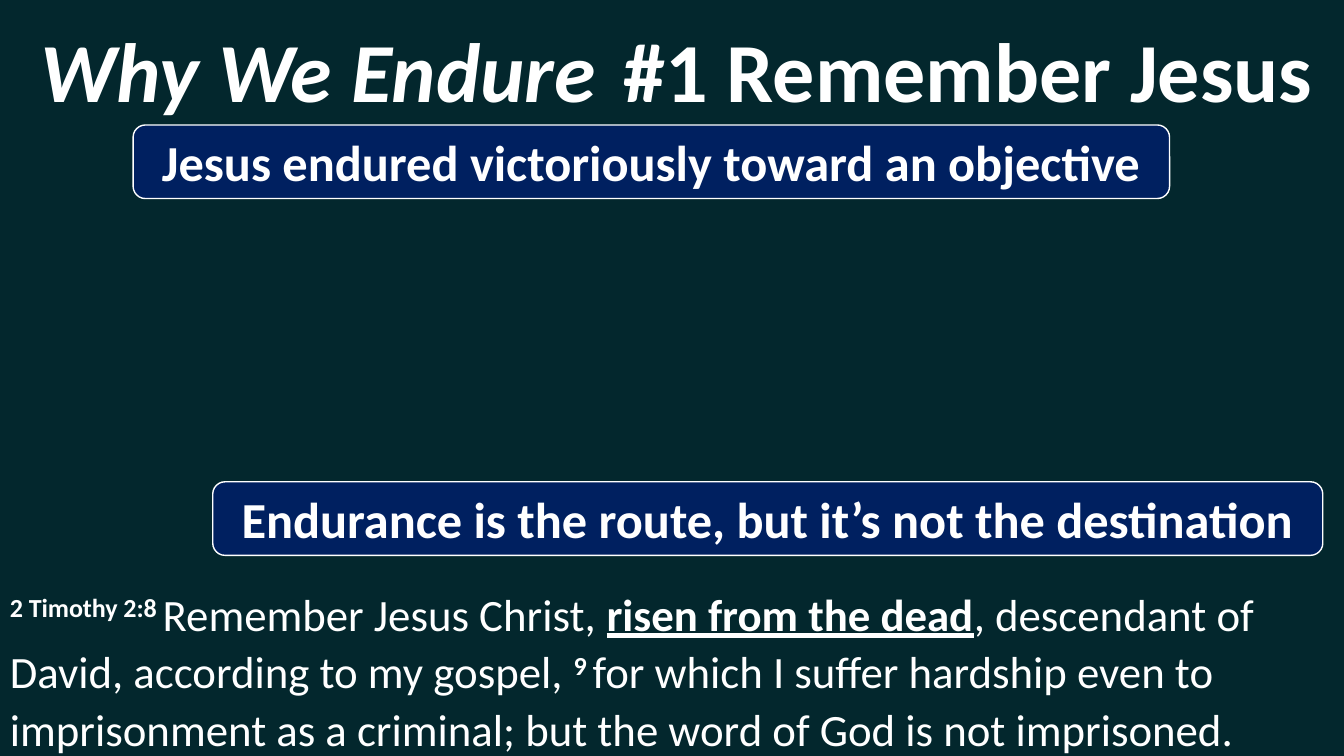
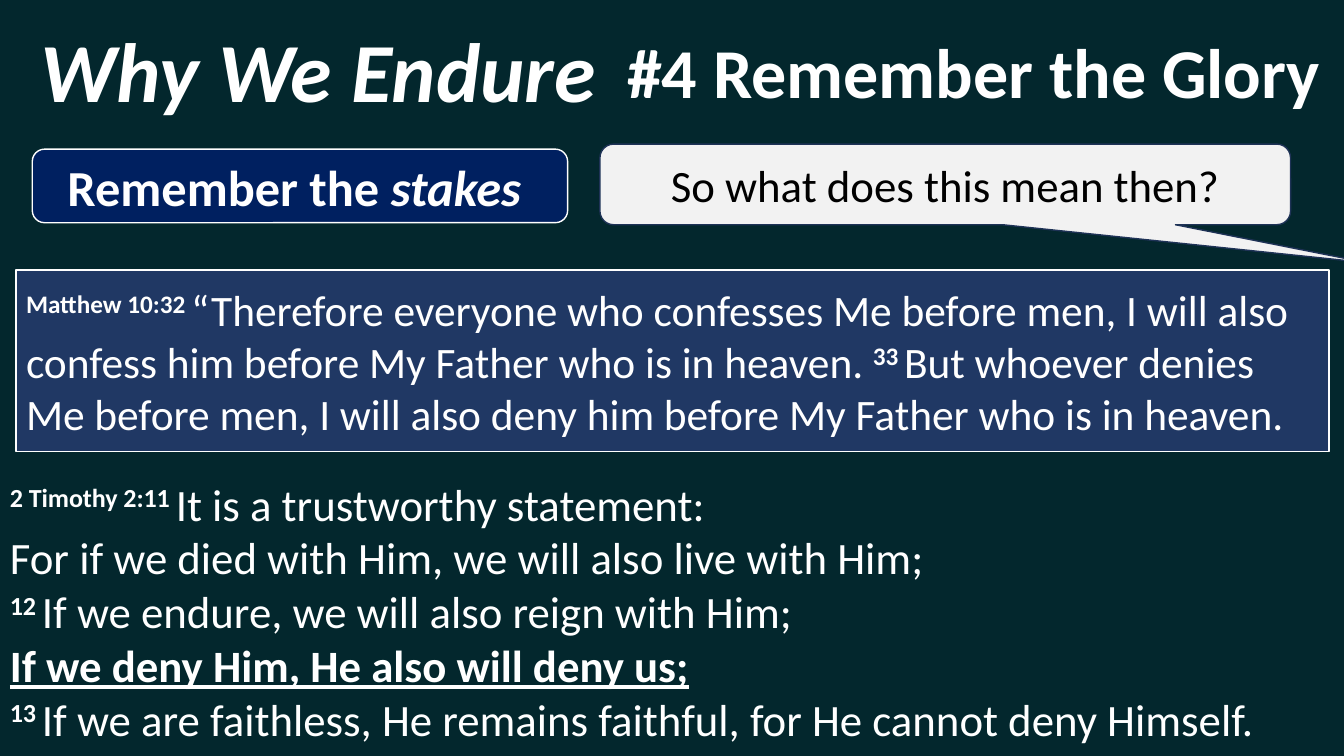
from pptx import Presentation
from pptx.dml.color import RGBColor as RGB
from pptx.enum.shapes import MSO_SHAPE as Kind
from pptx.enum.text import MSO_ANCHOR as Anchor, PP_ALIGN as Align
from pptx.util import Inches, Pt

WIDE, HIGH = 13.33, 7.5
HUES = {
    "back": "03272D", "navy": "002060", "quote": "203864",
    "pale": "F2F2F2", "edge": "1E3256", "white": "FFFFFF", "black": "000000",
}
# Run styles: each maps to font attributes
BOLD = {"bold": True}
SLANT = {"bold": True, "italic": True}
STRESS = {"bold": True, "underline": True}
PLAIN = {"bold": False}
RAISED = {"bold": True, "raise": 30}  # verse marks, percent above baseline


def hue(name):
    return RGB.from_string(HUES[name])


def write(frame, lines, size, color="white", align=Align.CENTER, space=None):
    """Fill a text frame; each line is a list of (text, style) runs."""
    frame.word_wrap = True
    for i, line in enumerate(lines):
        para = frame.paragraphs[0] if i == 0 else frame.add_paragraph()
        para.alignment = align
        if space:
            para.line_spacing = space
        for text, style in line:
            run = para.add_run()
            run.text = text
            look = {"name": "Calibri", "size": Pt(size), **style}
            lift = look.pop("raise", 0)
            for key, value in look.items():
                setattr(run.font, key, value)
            run.font.color.rgb = hue(color)
            if lift:
                run.font._element.set("baseline", str(lift * 1000))


def panel(slide, box, kind, fill, edge=None):
    """Draw a flat shape and return it."""
    shape = slide.shapes.add_shape(kind, *map(Inches, box))
    shape.shadow.inherit = False
    shape.fill.solid()
    shape.fill.fore_color.rgb = hue(fill)
    if edge:
        shape.line.color.rgb = hue(edge)
        shape.line.width = Pt(1)
    else:
        shape.line.fill.background()
    shape.text_frame.vertical_anchor = Anchor.MIDDLE
    return shape


def label(slide, box, text, size, style):
    area = slide.shapes.add_textbox(*map(Inches, box))
    write(area.text_frame, [[(text, style)]], size)


def header(slide, box, topic, size):
    """Series name on the left, topic of the slide on the right."""
    label(slide, (0, 0.13, 6.31, 1.11), "Why We Endure", 60, SLANT)
    label(slide, box, topic, size, BOLD)


def point(slide, box, *runs):
    """Rounded navy key point."""
    shape = panel(slide, box, Kind.ROUNDED_RECTANGLE, "navy", "white")
    write(shape.text_frame, [runs], 36)


def verse(slide, top, lines, space=None):
    """Scripture band that runs from top to the foot of the slide."""
    shape = panel(slide, (0, top, WIDE, HIGH - top), Kind.RECTANGLE, "back")
    write(shape.text_frame, lines, 32, align=Align.LEFT, space=space)


def quote(slide, box, line):
    """Framed supporting scripture."""
    shape = panel(slide, box, Kind.RECTANGLE, "quote", "white")
    write(shape.text_frame, [line], 31, align=Align.LEFT)


def speech(slide, box, text):
    """Question in a speech bubble, its tail to the lower right."""
    shape = panel(slide, box, Kind.ROUNDED_RECTANGULAR_CALLOUT, "pale", "edge")
    for i, value in enumerate((0.61, 0.97, 0.17)):
        shape.adjustments[i] = value
    write(shape.text_frame, [[(text, PLAIN)]], 32, "black")


def jesus(slide):
    header(slide, (5.89, 0.13, 7.42, 1.11), "#1 Remember Jesus", 60)
    point(slide, (1.32, 1.24, 10.28, 0.73),
          ("Jesus endured victoriously toward an objective", BOLD))
    point(slide, (2.11, 4.78, 11.01, 0.73),
          ("Endurance is the route, but it’s not the destination", BOLD))
    verse(slide, 5.77, [[
        ("2 Timothy 2:8 ", RAISED),
        ("Remember Jesus Christ, ", PLAIN),
        ("risen from the dead", STRESS),
        (", descendant of David, according to my gospel, ", PLAIN),
        ("9 ", RAISED),
        ("for which I suffer hardship even to imprisonment as a criminal; "
         "but the word of God is not imprisoned.", PLAIN),
    ]], space=1.07)


def glory(slide):
    header(slide, (5.95, 0.23, 7.42, 0.94), "#4 Remember the Glory", 50)
    verse(slide, 4.62, [
        [("2 Timothy 2:11 ", RAISED),
         ("It is a trustworthy statement:", PLAIN)],
        [("For if we died with Him, we will also live with Him;", PLAIN)],
        [("12 ", RAISED),
         ("If we endure, we will also reign with Him;", PLAIN)],
        [("If we deny Him, He also will deny us;", STRESS)],
        [("13 ", RAISED),
         ("If we are faithless, He remains faithful, "
          "for He cannot deny Himself.", PLAIN)],
    ])
    speech(slide, (5.95, 1.43, 6.85, 0.8), "So what does this mean then?")
    point(slide, (0.32, 1.48, 5.31, 0.73),
          ("Remember the ", BOLD), ("stakes ", SLANT))
    quote(slide, (0.16, 2.68, 13.02, 1.8), [
        ("Matthew 10:32 ", RAISED),
        ("“Therefore everyone who confesses Me before men, I will also "
         "confess him before My Father who is in heaven. ", PLAIN),
        ("33 ", RAISED),
        ("But whoever denies Me before men, I will also deny him before "
         "My Father who is in heaven.", PLAIN),
    ])


def main():
    deck = Presentation()
    deck.slide_width, deck.slide_height = Inches(WIDE), Inches(HIGH)
    # Shared background
    back = deck.slide_master.background.fill
    back.solid()
    back.fore_color.rgb = hue("back")
    for build in (jesus, glory):
        build(deck.slides.add_slide(deck.slide_layouts[6]))
    deck.save("out.pptx")


if __name__ == "__main__":
    main()
